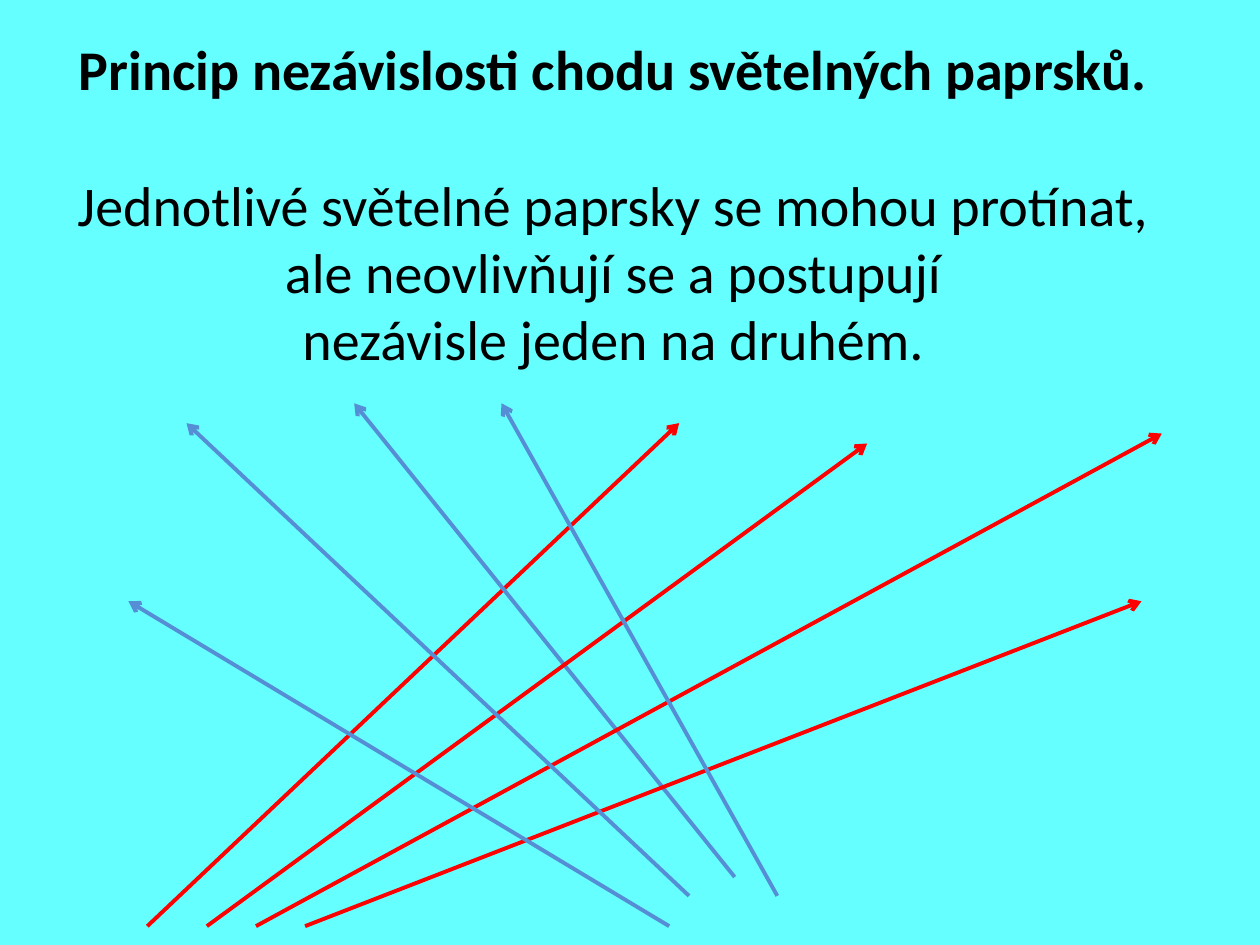
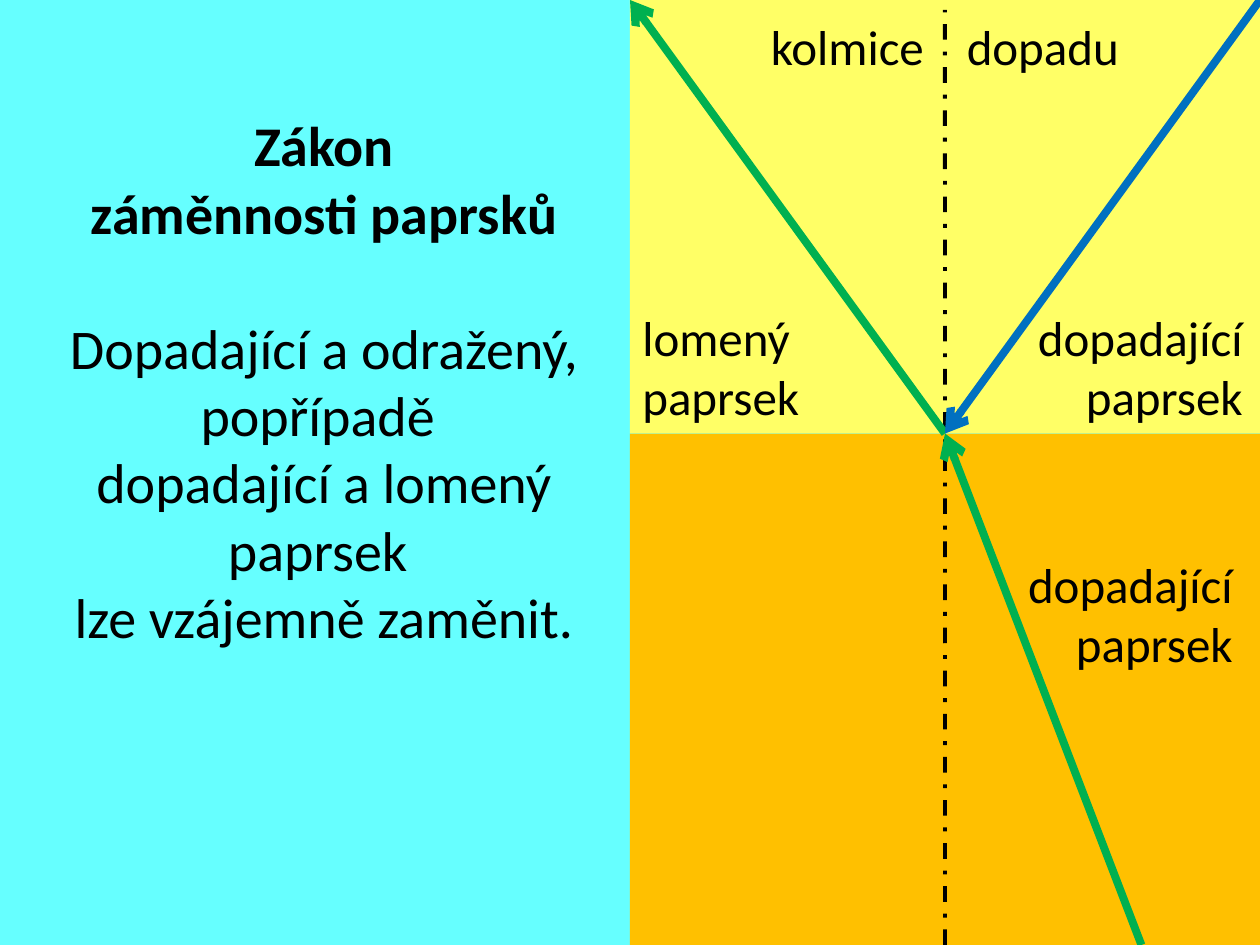
from lxml import etree
from pptx import Presentation
from pptx import util as u
from pptx.dml.color import RGBColor
from pptx.enum import dml, shapes, text
from pptx.oxml.ns import qn

COLORS = {
    "background": "66FFFF",
    "text": "000000",
    "red_ray": "FF0000",
    "pale_blue_ray": "558ED5",
    "green_ray": "00B050",
    "blue_ray": "0070C0",
    "air": "FFFF66",
    "water": "FFC000",
}
FONT = "Calibri"
LEFT, CENTER, RIGHT = text.PP_ALIGN.LEFT, text.PP_ALIGN.CENTER, text.PP_ALIGN.RIGHT
TOP_SIDE, BOTTOM_SIDE = 0, 2


def rgb(name):
    return RGBColor.from_string(COLORS[name])


def add_slide(prs):
    s = prs.slides.add_slide(prs.slide_layouts[6])
    s.background.fill.solid()
    s.background.fill.fore_color.rgb = rgb("background")
    return s


def add_text(s, box, lines, size, align):
    sp = s.shapes.add_textbox(*map(u.Cm, box))
    tf = sp.text_frame
    tf.word_wrap = True
    for i, line in enumerate(lines):
        p = tf.paragraphs[0] if i == 0 else tf.add_paragraph()
        p.text = line
        p.alignment = align
        p.font.name = FONT
        p.font.size = u.Pt(size)
        p.font.color.rgb = rgb("text")
    return tf


def add_statement(s, box, heading, lines):
    title = add_text(s, box, [heading, *lines], 32, CENTER).paragraphs[0]
    title.font.bold = True
    title.space_after = u.Pt(39)


def add_label(s, box, lines, align=LEFT):
    return add_text(s, box, lines, 28, align)


def add_medium(s, box, color):
    sp = s.shapes.add_shape(shapes.MSO_SHAPE.RECTANGLE, *map(u.Cm, box))
    sp.shadow.inherit = False
    sp.fill.solid()
    sp.fill.fore_color.rgb = rgb(color)
    sp.line.fill.background()
    return sp


def add_line(s, start, end, color, width):
    line = s.shapes.add_connector(
        shapes.MSO_CONNECTOR.STRAIGHT, *map(u.Cm, (*start, *end)))
    line.line.color.rgb = rgb(color)
    line.line.width = u.Pt(width)
    etree.SubElement(line._element.spPr, qn("a:effectLst"))
    return line


def add_ray(s, start, end, color, width):
    ray = add_line(s, start, end, color, width)
    etree.SubElement(ray.line._get_or_add_ln(), qn("a:tailEnd"), type="arrow")
    return ray


def build_independence(prs):
    s = add_slide(prs)
    add_statement(
        s, (0.58, 0.58, 23.83, 9.83),
        "Princip nezávislosti chodu světelných paprsků. ",
        ["Jednotlivé světelné paprsky se mohou protínat, \n"
         "ale neovlivňují se a postupují \nnezávisle jeden na druhém. "])
    rays = [
        ((2.97, 18.67), (13.69, 8.53), "red_ray"),
        ((14.81, 17.68), (7.14, 8.13), "pale_blue_ray"),
        ((4.17, 18.67), (17.48, 8.94), "red_ray"),
        ((5.16, 18.67), (23.42, 8.74), "red_ray"),
        ((6.15, 18.67), (23.01, 12.12), "red_ray"),
        ((13.89, 18.06), (3.76, 8.53), "pale_blue_ray"),
        ((15.67, 18.06), (10.11, 8.13), "pale_blue_ray"),
        ((13.49, 18.67), (2.59, 12.12), "pale_blue_ray"),
    ]
    for start, end, color in rays:
        add_ray(s, start, end, color, 2.25)


def build_reversibility(prs):
    s = add_slide(prs)
    add_statement(
        s, (0.58, 2.11, 11.91, 11.2), "Zákon\nzáměnnosti paprsků",
        ["Dopadající a odražený, popřípadě ",
         "dopadající a lomený paprsek ",
         "lze vzájemně zaměnit."])

    half, right, bottom, surface = 12.7, 25.4, 19.05, 8.74
    middle = (half + right) / 2
    hit = (middle, surface)
    water = add_medium(s, (half, surface, half, bottom - surface), "water")
    add_medium(s, (half, 0, half, surface), "air")

    normal = add_line(s, (middle, bottom), (middle, 0.2), "text", 2.25)
    normal.line.dash_style = dml.MSO_LINE.DASH_DOT
    normal.begin_connect(water, BOTTOM_SIDE)
    p = add_label(s, (15.29, 0.2, 7.95, 1.45), ["kolmice\tdopadu"]).paragraphs[0]
    tabs = etree.SubElement(p._p.get_or_add_pPr(), qn("a:tabLst"))
    p._p.pPr.insert(0, tabs)
    etree.SubElement(tabs, qn("a:tab"), pos=str(u.Cm(3.95)), algn="l")

    from_water = add_ray(s, (23.01, bottom), hit, "green_ray", 4.5)
    from_water.end_connect(water, TOP_SIDE)
    refracted = add_ray(s, hit, (half, 0), "green_ray", 4.5)
    refracted.begin_connect(water, TOP_SIDE)
    from_air = add_ray(s, (right, 0), hit, "blue_ray", 4.5)
    from_air.end_connect(water, TOP_SIDE)

    label_size = (5.16, 2.64)
    add_label(s, (half, 6.07, *label_size), ["lomený", "paprsek"])
    for left, top in ((19.94, 11.05), (20.14, 6.07)):
        add_label(s, (left, top, *label_size), ["dopadající\npaprsek"], RIGHT)


def main():
    prs = Presentation()
    prs.slide_width, prs.slide_height = u.Cm(25.4), u.Cm(19.05)
    build_independence(prs)
    build_reversibility(prs)
    prs.save("out.pptx")


if __name__ == "__main__":
    main()
